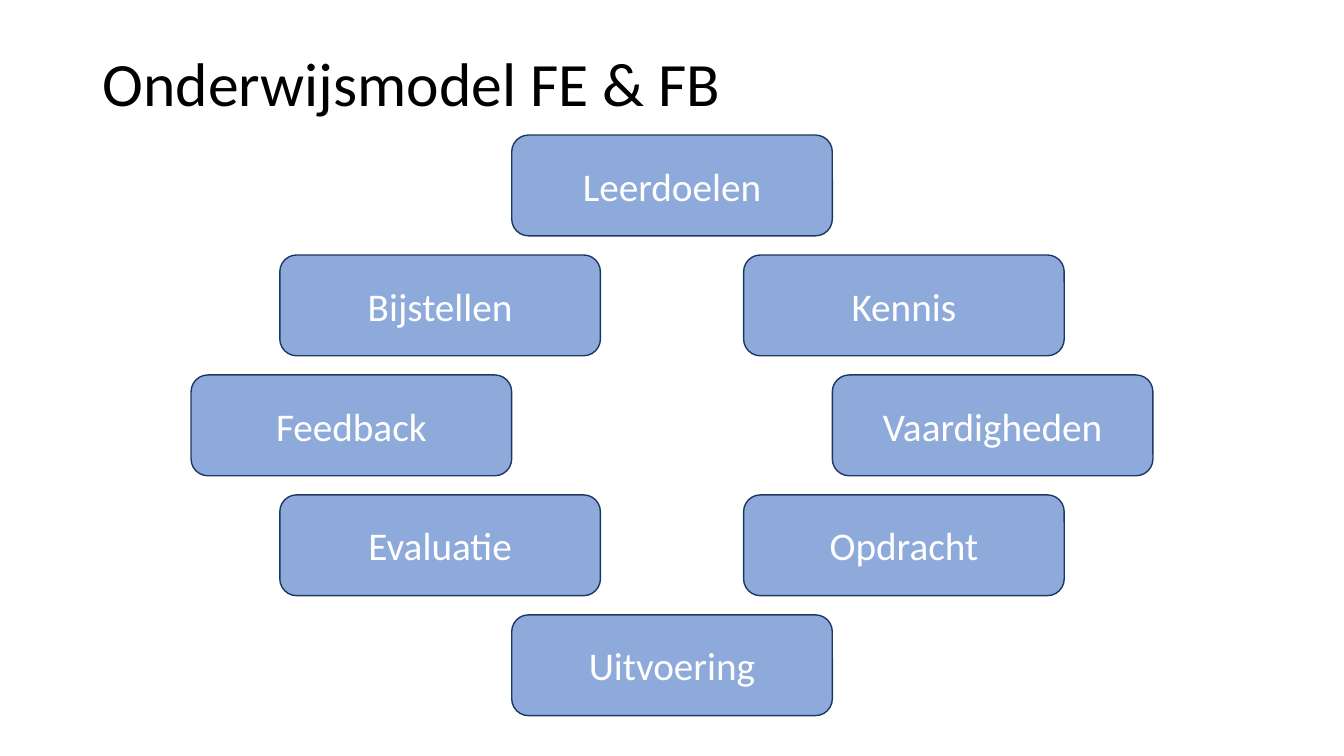
"""Build a slide with the ring of steps in an education model."""
import pptx
import pptx.dml.color
import pptx.enum.shapes
import pptx.enum.text
import pptx.util

TITLE = "Onderwijsmodel FE & FB"
STEPS = [
    ("Leerdoelen", 0, 0),
    ("Kennis", 2.3, 1),
    ("Vaardigheden", 3.18, 2),
    ("Opdracht", 2.3, 3),
    ("Uitvoering", 0, 4),
    ("Evaluatie", -2.3, 3),
    ("Feedback", -3.18, 2),
    ("Bijstellen", -2.3, 1),
]
SLIDE_WIDTH, SLIDE_HEIGHT = 13.33, 7.5
BOX_WIDTH, BOX_HEIGHT = 3.18, 1
FIRST_ROW, ROW_PITCH = 1.34, 1.19
inches = pptx.util.Inches


def color(value):
    """Turn a hex string into a colour."""
    return pptx.dml.color.RGBColor.from_string(value)


def write_text(shape, text, *, size, font_color, align, spacing=1.0):
    """Put one formatted, vertically centred paragraph in a shape."""
    frame = shape.text_frame
    frame.word_wrap = True
    frame.vertical_anchor = pptx.enum.text.MSO_ANCHOR.MIDDLE
    paragraph = frame.paragraphs[0]
    paragraph.alignment = align
    paragraph.line_spacing = spacing
    run = paragraph.add_run()
    run.text = text
    run.font.name = "Calibri"
    run.font.size = pptx.util.Pt(size)
    run.font.color.rgb = color(font_color)


def add_step(slide, text, offset, row):
    """Draw one rounded box, offset from the centre of the slide."""
    left = (SLIDE_WIDTH - BOX_WIDTH) / 2 + offset
    top = FIRST_ROW + row * ROW_PITCH
    shape = slide.shapes.add_shape(
        pptx.enum.shapes.MSO_SHAPE.ROUNDED_RECTANGLE,
        inches(left), inches(top), inches(BOX_WIDTH), inches(BOX_HEIGHT))
    shape.shadow.inherit = False
    shape.fill.solid()
    shape.fill.fore_color.rgb = color("8EAADB")
    shape.line.color.rgb = color("1F3763")
    shape.line.width = pptx.util.Pt(1)
    write_text(shape, text, size=28, font_color="FFFFFF",
               align=pptx.enum.text.PP_ALIGN.CENTER)


def main():
    """Build and save the presentation."""
    presentation = pptx.Presentation()
    presentation.slide_width = inches(SLIDE_WIDTH)
    presentation.slide_height = inches(SLIDE_HEIGHT)
    slide = presentation.slides.add_slide(presentation.slide_layouts[5])
    title = slide.shapes.title
    title.left, title.top = inches(0.92), inches(0.13)
    title.width, title.height = inches(11.5), inches(1.45)
    write_text(title, TITLE, size=44, font_color="000000",
               align=pptx.enum.text.PP_ALIGN.LEFT, spacing=0.9)
    for text, offset, row in STEPS:
        add_step(slide, text, offset, row)
    presentation.save("out.pptx")


if __name__ == "__main__":
    main()
